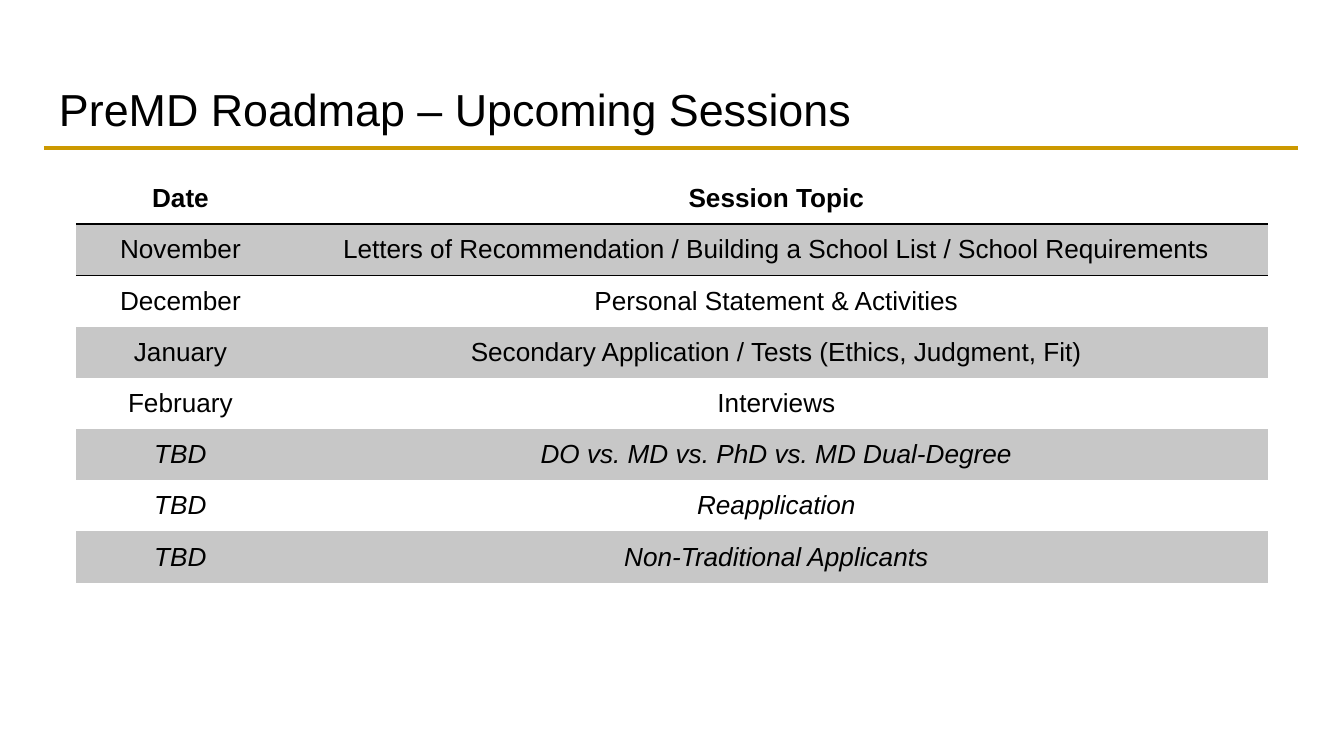
from dataclasses import dataclass

from lxml import etree
from pptx import Presentation
from pptx import util as u
from pptx.dml.color import RGBColor
from pptx.enum import shapes, text
from pptx.oxml import ns

SCALE = 914400 / 134.4
BLACK = RGBColor(0x00, 0x00, 0x00)
WHITE = RGBColor(0xFF, 0xFF, 0xFF)
GOLD = RGBColor(0xCC, 0x99, 0x00)
GREY = RGBColor(0xC7, 0xC7, 0xC7)
FONT = "Arial"
PLAIN_TABLE = "{2D5ABB26-0587-4C30-8999-92F81FD0307C}"


@dataclass(frozen=True)
class Box:
    left: int
    top: int
    width: int
    height: int

    def emu(self) -> tuple:
        return tuple(map(px, (self.left, self.top, self.width, self.height)))


@dataclass(frozen=True)
class Session:
    date: str
    topic: str
    bold: bool = False
    italic: bool = False


SESSIONS = [
    Session("Date", "Session Topic", bold=True),
    Session("November", "Letters of Recommendation / Building a School List / School Requirements"),
    Session("December", "Personal Statement & Activities"),
    Session("January", "Secondary Application / Tests (Ethics, Judgment, Fit)"),
    Session("February", "Interviews"),
    Session("TBD", "DO vs. MD vs. PhD vs. MD Dual-Degree", italic=True),
    Session("TBD", "Reapplication", italic=True),
    Session("TBD", "Non-Traditional Applicants", italic=True),
]
TITLE_BOX = Box(46, 66, 1253, 85)
SCHEDULE_BOX = Box(76, 173, 1192, 410)
COLUMN_WIDTHS = (209, 983)


def px(length: float) -> int:
    return round(length * SCALE)


def apply(target, values: dict) -> None:
    for name, value in values.items():
        setattr(target, name, value)


def write(paragraph, words: str, size: int, align, bold=False, italic=False) -> None:
    paragraph.alignment = align
    run = paragraph.add_run()
    run.text = words
    apply(run.font, {"name": FONT, "size": u.Pt(size), "bold": bold, "italic": italic})
    run.font.color.rgb = BLACK


def draw_rule(slide, left: int, right: int, y: int) -> None:
    rule = slide.shapes.add_connector(
        shapes.MSO_CONNECTOR.STRAIGHT, px(left), px(y), px(right), px(y))
    rule.line.color.rgb = GOLD
    rule.line.width = u.Pt(2.25)
    etree.SubElement(rule._element.spPr, ns.qn("a:effectLst"))


def draw_title(slide, words: str) -> None:
    title = slide.shapes.title
    apply(title, dict(zip(("left", "top", "width", "height"), TITLE_BOX.emu())))
    frame = title.text_frame
    apply(frame, {
        "margin_left": px(13), "margin_right": px(13),
        "margin_top": px(13), "margin_bottom": px(13),
        "vertical_anchor": text.MSO_ANCHOR.MIDDLE,
        "auto_size": text.MSO_AUTO_SIZE.NONE, "word_wrap": True,
    })
    write(frame.paragraphs[0], words, 24, text.PP_ALIGN.LEFT)


def add_border(cell, side: str) -> None:
    border = etree.Element(ns.qn(f"a:{side}"), w=str(u.Pt(1)))
    fill = etree.SubElement(border, ns.qn("a:solidFill"))
    etree.SubElement(fill, ns.qn("a:srgbClr"), val=str(BLACK))
    cell._tc.get_or_add_tcPr().insert(0, border)


def fill_cell(cell, words: str, session: Session, row: int) -> None:
    apply(cell, {
        "margin_left": px(1), "margin_right": px(1),
        "margin_top": px(7), "margin_bottom": px(7),
        "vertical_anchor": text.MSO_ANCHOR.MIDDLE,
    })
    write(cell.text_frame.paragraphs[0], words, 14, text.PP_ALIGN.CENTER,
          session.bold, session.italic)
    if row % 2:
        cell.fill.solid()
        cell.fill.fore_color.rgb = GREY
    else:
        cell.fill.background()
    if row < 2:
        add_border(cell, "lnT" if row else "lnB")


def draw_schedule(slide, sessions: list[Session]) -> None:
    schedule = slide.shapes.add_table(
        len(sessions), len(COLUMN_WIDTHS), *SCHEDULE_BOX.emu()).table
    apply(schedule, {"first_row": False, "horz_banding": False})
    schedule._tbl.tblPr.find(ns.qn("a:tableStyleId")).text = PLAIN_TABLE
    for column, width in zip(schedule.columns, COLUMN_WIDTHS):
        column.width = px(width)
    for row, session in enumerate(sessions):
        schedule.rows[row].height = px(SCHEDULE_BOX.height / len(sessions))
        for column, words in enumerate((session.date, session.topic)):
            fill_cell(schedule.cell(row, column), words, session, row)


def main() -> None:
    deck = Presentation()
    apply(deck, {"slide_width": px(1344), "slide_height": px(756)})
    slide = deck.slides.add_slide(deck.slide_layouts[5])
    slide.background.fill.solid()
    slide.background.fill.fore_color.rgb = WHITE
    draw_rule(slide, 44, 1298, 148)
    draw_title(slide, "PreMD Roadmap – Upcoming Sessions")
    draw_schedule(slide, SESSIONS)
    deck.save("out.pptx")


if __name__ == "__main__":
    main()
